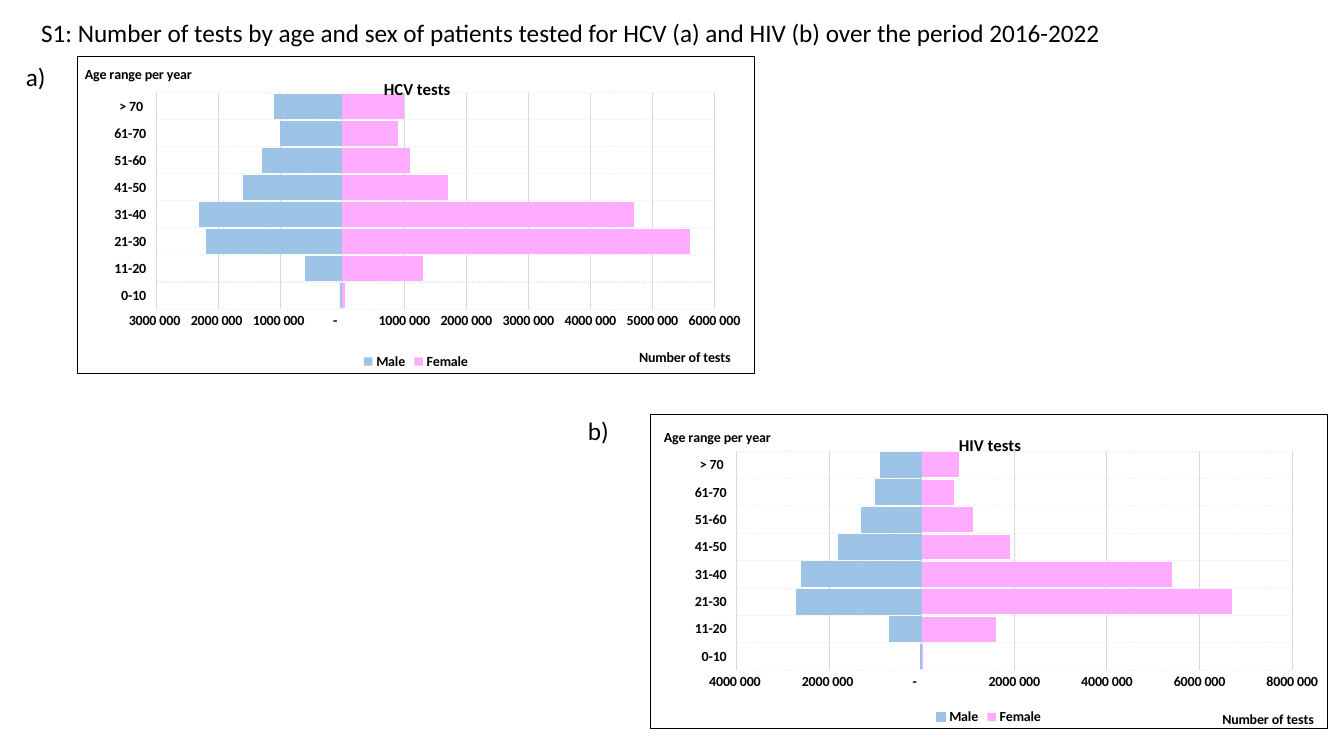
from lxml import etree
from pptx import Presentation
from pptx.chart.data import CategoryChartData
from pptx.dml.color import RGBColor
from pptx.enum.chart import XL_CHART_TYPE, XL_LEGEND_POSITION, XL_TICK_LABEL_POSITION, XL_TICK_MARK
from pptx.enum.dml import MSO_LINE
from pptx.enum.text import MSO_ANCHOR, PP_ALIGN
from pptx.oxml import parse_xml
from pptx.oxml.ns import nsdecls, qn
from pptx.util import Pt

BAR = XL_CHART_TYPE.BAR_CLUSTERED
BOTTOM = XL_LEGEND_POSITION.BOTTOM
LOW = XL_TICK_LABEL_POSITION.LOW
NO_TICK = XL_TICK_MARK.NONE
DOTTED = MSO_LINE.ROUND_DOT
TOP, LEFT = MSO_ANCHOR.TOP, PP_ALIGN.LEFT

# Content, lengths in px
PX = 914400 / 100.8
FONT = "Calibri"
BLACK, GRID, FAINT = "000000", "D9D9D9", "EDEDED"
TITLE = ("S1: Number of tests by age and sex of patients tested for HCV (a) "
         "and HIV (b) over the period 2016-2022")
TITLE_BOX = (31, 12, 1107, 72)
AGES = ["0-10", "11-20", "21-30", "31-40", "41-50", "51-60", "61-70", "> 70 "]
COLOURS = {"Female": "FFABFF", "Male": "9DC3E6"}
NUMBERS = r'_-* #\ ##0_-;* #\ ##0_-;_-* "-"??_-;_-@_-'
MILLION = 1000000
CHART_SIZE = (678, 318)

# Series in millions of tests; title places are px from the chart corner
PANELS = [
    {
        "label": "a)", "label_box": (16, 56, 102, 40), "corner": (77, 56),
        "title": "HCV tests", "title_at": (304, 18),
        "age_at": (5, 6), "number_at": (560, 290),
        "plot": (0.116, 0.115, 0.825, 0.682), "scale": (-3, 6, 1),
        "series": {
            "Female": [0.04, 1.3, 5.6, 4.7, 1.7, 1.1, 0.9, 1.0],
            "Male": [-0.04, -0.6, -2.2, -2.3, -1.6, -1.3, -1.0, -1.1],
        },
        "outlined": [],
    },
    {
        "label": "b)", "label_box": (578, 410, 59, 40), "corner": (650, 414),
        "title": "HIV tests", "title_at": (306, 17),
        "age_at": (11, 11), "number_at": (570, 297),
        "plot": (0.127, 0.117, 0.821, 0.697), "scale": (-4, 8, 2),
        "series": {
            "Female": [0.03, 1.6, 6.7, 5.4, 1.9, 1.1, 0.7, 0.8],
            "Male": [-0.03, -0.7, -2.7, -2.6, -1.8, -1.3, -1.0, -0.9],
        },
        "outlined": ["Male"],
    },
]


def px(*lengths):
    return [round(length * PX) for length in lengths]


def rgb(colour):
    return RGBColor.from_string(colour)


def set_all(target, values):
    for name, value in values.items():
        setattr(target, name, value)


def set_font(font, size, bold):
    set_all(font, {"name": FONT, "size": Pt(size), "bold": bold})
    font.color.rgb = rgb(BLACK)


def set_line(line, colour):
    line.color.rgb = rgb(colour)
    line.width = Pt(0.75)


def write(box, text, bounds):
    set_all(box, dict(zip(("left", "top", "width", "height"), px(*bounds))))
    frame = box.text_frame
    set_all(frame, {"text": text, "word_wrap": True, "vertical_anchor": TOP})
    para = frame.paragraphs[0]
    para.alignment = LEFT
    set_font(para.runs[0].font, 18, False)


def place(parent, position, inner=False):
    """Give a chart title or plot area a fixed place, in shares of the chart."""
    layout = parent.find(qn("c:layout"))
    if layout is None:
        layout = etree.Element(qn("c:layout"))
        text = parent.find(qn("c:tx"))
        parent.insert(0 if text is None else parent.index(text) + 1, layout)
    for child in list(layout):
        layout.remove(child)
    manual = etree.SubElement(layout, qn("c:manualLayout"))
    fields = [("layoutTarget", "inner")] if inner else []
    fields += [("xMode", "edge"), ("yMode", "edge")]
    fields += zip("xywh", position)
    for name, value in fields:
        etree.SubElement(manual, qn("c:" + name)).set("val", str(value))


def add_title(title, text, size, at):
    frame = title.text_frame
    frame.text = text
    set_font(frame.paragraphs[0].runs[0].font, size, True)
    body = title.element.find(".//" + qn("a:bodyPr"))
    body.set("rot", "0")
    body.set("vert", "horz")
    place(title.element, [round(a / b, 3) for a, b in zip(at, CHART_SIZE)])


def add_pyramid(page, panel):
    data = CategoryChartData(number_format="General")
    data.categories = AGES
    for name, values in panel["series"].items():
        data.add_series(name, [round(value * MILLION) for value in values])
    bounds = px(*panel["corner"], *CHART_SIZE)
    chart = page.shapes.add_chart(BAR, *bounds, data).chart
    set_font(chart.font, 10, True)

    # Bars
    plot = chart.plots[0]
    set_all(plot, {"gap_width": 10, "overlap": 100, "vary_by_categories": False})
    for series in plot.series:
        colour = rgb(COLOURS[series.name])
        series.invert_if_negative = False
        series.format.fill.solid()
        series.format.fill.fore_color.rgb = colour
        if series.name in panel["outlined"]:
            set_line(series.format.line, COLOURS[series.name])

    # Axes
    ages, numbers = chart.category_axis, chart.value_axis
    for axis in (ages, numbers):
        set_all(axis, {"major_tick_mark": NO_TICK, "minor_tick_mark": NO_TICK,
                       "has_major_gridlines": True, "has_title": True})
        set_font(axis.tick_labels.font, 10, True)
    ages.tick_label_position = LOW
    set_line(ages.format.line, GRID)
    set_line(ages.major_gridlines.format.line, FAINT)
    ages.major_gridlines.format.line.dash_style = DOTTED
    numbers.format.line.fill.background()
    set_line(numbers.major_gridlines.format.line, GRID)
    low, high, step = (value * MILLION for value in panel["scale"])
    set_all(numbers, {"minimum_scale": low, "maximum_scale": high, "major_unit": step})
    set_all(numbers.tick_labels, {"number_format": NUMBERS, "number_format_is_linked": False})

    # Titles and legend
    chart.has_title = chart.has_legend = True
    add_title(chart.chart_title, panel["title"], 12, panel["title_at"])
    add_title(ages.axis_title, "Age range per year", 10, panel["age_at"])
    add_title(numbers.axis_title, "Number of tests", 10, panel["number_at"])
    set_all(chart.legend, {"position": BOTTOM, "include_in_layout": False})
    set_font(chart.legend.font, 10, True)

    # Plot area and frame
    body = chart.element.find(qn("c:chart"))
    place(body.find(qn("c:plotArea")), panel["plot"], inner=True)
    body.addnext(parse_xml(
        f'<c:spPr {nsdecls("c", "a")}><a:solidFill><a:srgbClr val="FFFFFF"/></a:solidFill>'
        f'<a:ln w="{Pt(0.75)}"><a:solidFill><a:srgbClr val="{BLACK}"/></a:solidFill></a:ln></c:spPr>'))


def main():
    deck = Presentation()
    deck.slide_width, deck.slide_height = px(1344, 756)
    page = deck.slides.add_slide(deck.slide_layouts[5])
    write(page.shapes.title, TITLE, TITLE_BOX)
    for panel in PANELS:
        add_pyramid(page, panel)
        box = page.shapes.add_textbox(0, 0, 0, 0)
        write(box, panel["label"], panel["label_box"])
    deck.save("out.pptx")


if __name__ == "__main__":
    main()
